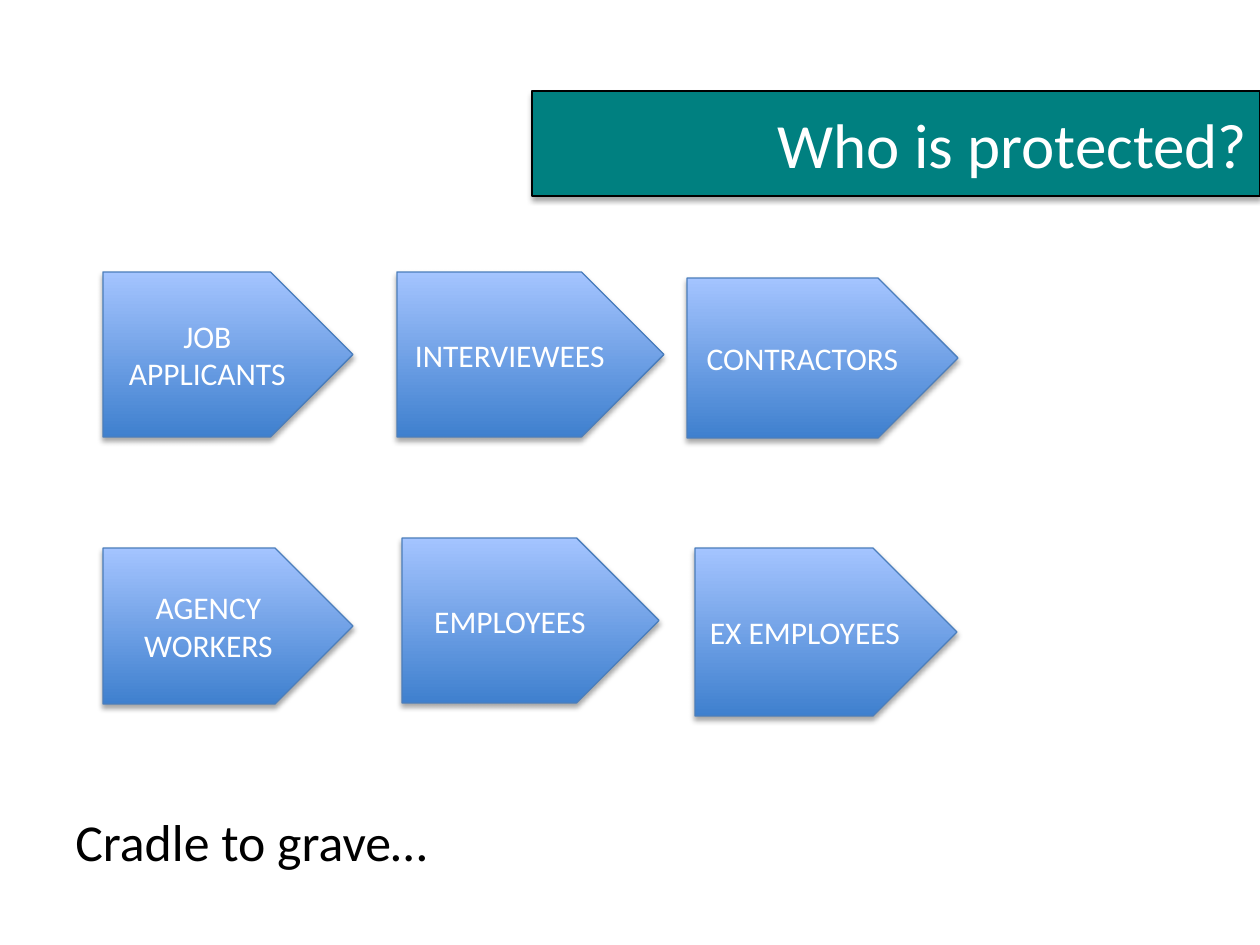
from dataclasses import dataclass

from lxml.etree import SubElement
from pptx import Presentation
from pptx.dml.color import RGBColor
from pptx.enum.shapes import MSO_SHAPE
from pptx.enum.text import MSO_ANCHOR, PP_ALIGN
from pptx.oxml.ns import qn
from pptx.util import Emu, Pt


@dataclass(frozen=True)
class Theme:
    font: str = "Calibri"
    title_size: float = 36
    arrow_size: float = 18
    note_size: float = 29.6
    white: str = "FFFFFF"
    black: str = "000000"
    teal: str = "008080"
    arrow_bottom: str = "3F80CE"
    arrow_top: str = "A4C4FF"
    arrow_line: str = "4B7EBC"


THEME = Theme()
PX_PER_INCH = 126

# Protected groups: label, left, top, width, height
GROUPS = [
    ("JOB APPLICANTS", 103, 272, 250, 165),
    ("INTERVIEWEES", 397, 272, 267, 165),
    ("CONTRACTORS", 687, 278, 271, 160),
    ("AGENCY WORKERS", 103, 548, 250, 156),
    ("EMPLOYEES", 402, 538, 257, 165),
    ("EX EMPLOYEES", 695, 548, 262, 168),
]


def px(n):
    return Emu(round(n * 914400 / PX_PER_INCH))


def rgb(value):
    return RGBColor.from_string(value)


def set_text(sp, text, size, color, align, anchor=MSO_ANCHOR.MIDDLE):
    tf = sp.text_frame
    tf.word_wrap = True
    tf.vertical_anchor = anchor
    p = tf.paragraphs[0]
    p.text = text
    p.alignment = align
    p.font.name = THEME.font
    p.font.size = Pt(size)
    p.font.color.rgb = rgb(color)


def add_shadow(sp):
    """Soft shadow straight below the shape."""
    sp.shadow.inherit = False
    effects = sp._element.spPr.find(qn("a:effectLst"))
    shadow = SubElement(effects, qn("a:outerShdw"), blurRad=str(Pt(3.1)),
                        dist=str(Pt(1.8)), dir="5400000", rotWithShape="0")
    color = SubElement(shadow, qn("a:srgbClr"), val=THEME.black)
    SubElement(color, qn("a:alpha"), val="35000")


def add_block(slide, kind, box, line):
    sp = slide.shapes.add_shape(kind, *map(px, box))
    sp.line.color.rgb = rgb(line)
    sp.line.width = Pt(0.75)
    add_shadow(sp)
    return sp


def add_title(slide, text, box):
    sp = add_block(slide, MSO_SHAPE.RECTANGLE, box, THEME.black)
    sp.fill.solid()
    sp.fill.fore_color.rgb = rgb(THEME.teal)
    set_text(sp, text, THEME.title_size, THEME.white, PP_ALIGN.RIGHT)


def add_arrow(slide, text, box):
    sp = add_block(slide, MSO_SHAPE.PENTAGON, box, THEME.arrow_line)
    sp.fill.gradient()
    sp.fill.gradient_angle = 90
    for stop, color in zip(sp.fill.gradient_stops,
                           (THEME.arrow_bottom, THEME.arrow_top)):
        stop.color.rgb = rgb(color)
    set_text(sp, text, THEME.arrow_size, THEME.white, PP_ALIGN.CENTER)


def add_note(slide, text, box):
    sp = slide.shapes.add_textbox(*map(px, box))
    set_text(sp, text, THEME.note_size, THEME.black, PP_ALIGN.LEFT, MSO_ANCHOR.TOP)


def main():
    prs = Presentation()
    prs.slide_width, prs.slide_height = px(1260), px(945)
    slide = prs.slides.add_slide(prs.slide_layouts[6])

    # Closing remark
    add_note(slide, "Cradle to grave…", (63, 804, 1134, 76))

    # Title bar, flush with the right edge
    add_title(slide, "Who is protected?", (532, 91, 728, 105))

    # Two rows of protected groups
    for label, *box in GROUPS:
        add_arrow(slide, label, box)

    prs.save("out.pptx")


if __name__ == "__main__":
    main()
